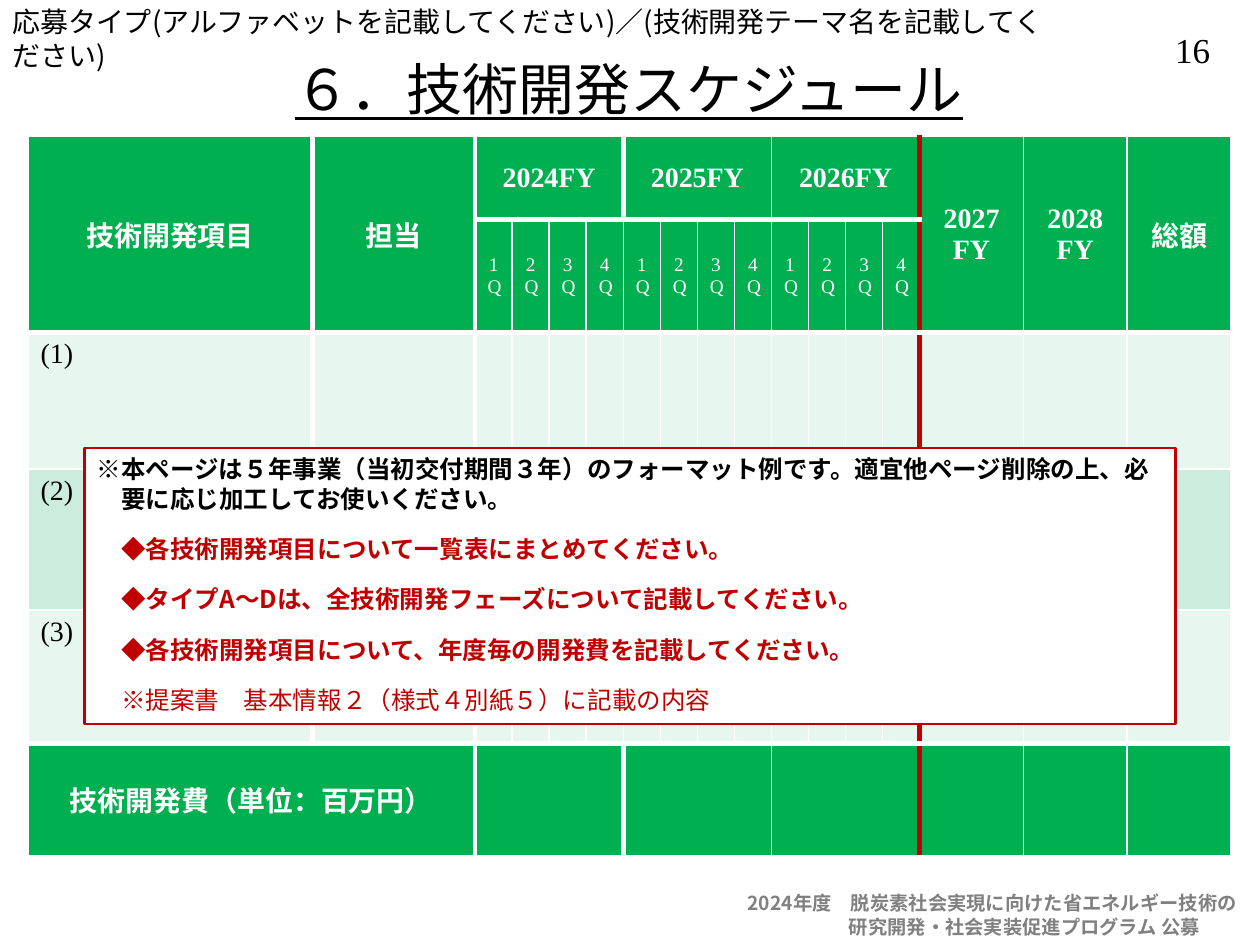
from lxml.etree import SubElement
from pptx import Presentation
from pptx.dml.color import RGBColor
from pptx.enum.shapes import MSO_SHAPE as Shape
from pptx.enum.text import MSO_ANCHOR as Anchor, MSO_AUTO_SIZE as AutoSize, PP_ALIGN as Align
from pptx.oxml.ns import qn
from pptx.util import Pt

SANS, SERIF = "Noto Sans CJK JP", "Times New Roman"
WHITE, BLACK, GRAY = "FFFFFF", "000000", "808080"
GREEN, RED, PALE, MINT = "00B050", "C00000", "E7F6EF", "CCECDE"


def color(value):
    """Turn a hex string into a colour."""
    return RGBColor.from_string(value)


def write(frame, text, first=True, size=16, font=SANS, fill=BLACK, bold=False,
          underline=False, align=Align.LEFT, before=0, margin=0, indent=0):
    """Write one paragraph into a text frame."""
    paragraph = frame.paragraphs[0] if first else frame.add_paragraph()
    paragraph.alignment = align
    if before:
        paragraph.space_before = Pt(before)
    if margin:
        properties = paragraph._p.get_or_add_pPr()
        properties.set("marL", str(Pt(margin)))
        properties.set("indent", str(Pt(indent)))
    run = paragraph.add_run()
    run.text = text
    run.font.size, run.font.name = Pt(size), font
    run.font.bold, run.font.underline = bold, underline
    run.font.color.rgb = color(fill)
    SubElement(run._r.get_or_add_rPr(), qn("a:ea")).set("typeface", SANS)


def add_text_box(slide, left, top, width, height, wrap=True, grow=True):
    """Add an empty text box and return its text frame."""
    frame = slide.shapes.add_textbox(Pt(left), Pt(top), Pt(width), Pt(height)).text_frame
    frame.word_wrap = wrap
    frame.auto_size = AutoSize.SHAPE_TO_FIT_TEXT if grow else AutoSize.NONE
    return frame


def add_heading(slide, left, top):
    """Add the application line, page number and title."""
    write(add_text_box(slide, left, top, 605, 27),
          "応募タイプ(アルファベットを記載してください)／(技術開発テーマ名を記載してください)")
    write(add_text_box(slide, left + 658, top + 13.5, 47, 31, wrap=False), "16",
          size=20, font=SERIF, align=Align.CENTER)
    title = add_text_box(slide, left + 53.5, top + 26, 612, 50, grow=False)
    title.vertical_anchor = Anchor.MIDDLE
    write(title, "６．技術開発スケジュール", size=32, underline=True, align=Align.CENTER)


def add_footer(slide, left, top):
    """Add the two-line programme name."""
    frame = add_text_box(slide, left, top, 300, 34)
    style = dict(size=11, fill=GRAY, bold=True)
    write(frame, "2024年度　脱炭素社会実現に向けた省エネルギー技術の", **style)
    write(frame, "研究開発・社会実装促進プログラム 公募", first=False, margin=58, **style)


def set_borders(cell, row, column):
    """Draw cell borders according to the grid lines that bound the cell."""
    def vertical(line):
        thick = line in (1, 2, 14) or (line == 6 and row in (0, 5))
        return (RED if line == 14 else WHITE), 3 if thick else 1

    def horizontal(line):
        return WHITE, 3 if line in (1, 2, 5) else 1

    edges = {"L": vertical(column), "R": vertical(column + cell.span_width),
             "T": horizontal(row), "B": horizontal(row + cell.span_height)}
    properties = cell._tc.get_or_add_tcPr()
    for side, (fill, width) in edges.items():
        line = SubElement(properties, qn(f"a:ln{side}"), w=str(Pt(width)))
        SubElement(SubElement(line, qn("a:solidFill")), qn("a:srgbClr"), val=fill)


def add_schedule(slide, left, top):
    """Add the schedule table with quarters, years and totals."""
    widths = [162.5, 93] + [21.2] * 12 + [59.3] * 3
    heights = [47.5, 64.8, 78, 80.5, 76.3, 64]
    fills = [GREEN, GREEN, PALE, MINT, PALE, GREEN]
    table = slide.shapes.add_table(len(heights), len(widths), Pt(left), Pt(top),
                                   Pt(sum(widths)), Pt(sum(heights))).table
    table.first_row = table.horz_banding = False
    for column, width in zip(table.columns, widths):
        column.width = Pt(width)
    for row, height in zip(table.rows, heights):
        row.height = Pt(height)

    for column in (0, 1, 14, 15, 16):
        table.cell(0, column).merge(table.cell(1, column))
    for row in (0, 5):
        for column in (2, 6, 10):
            table.cell(row, column).merge(table.cell(row, column + 3))
    table.cell(5, 0).merge(table.cell(5, 1))

    for row, fill in enumerate(fills):
        for column in range(len(widths)):
            cell = table.cell(row, column)
            set_borders(cell, row, column)
            cell.fill.solid()
            cell.fill.fore_color.rgb = color(fill)

    labels = {(0, 0): "技術開発項目", (0, 1): "担当", (0, 2): "2024FY", (0, 6): "2025FY",
              (0, 10): "2026FY", (0, 14): "2027\nFY", (0, 15): "2028\nFY", (0, 16): "総額",
              (5, 0): "技術開発費（単位：百万円）"}
    labels.update({(1, 2 + i): f"{i % 4 + 1}Q" for i in range(12)})
    for (row, column), text in labels.items():
        cell = table.cell(row, column)
        cell.vertical_anchor = Anchor.MIDDLE
        for i, line in enumerate(text.split("\n")):
            write(cell.text_frame, line, first=i == 0, size=11 if row == 1 else 16,
                  font=SERIF, fill=WHITE, bold=row != 1, align=Align.CENTER)
    for number in (1, 2, 3):
        write(table.cell(number + 1, 0).text_frame, f"({number})", font=SERIF)


def add_instructions(slide, left, top, width, height):
    """Add the red-framed box of instructions."""
    shape = slide.shapes.add_shape(Shape.RECTANGLE, Pt(left), Pt(top), Pt(width), Pt(height))
    shape.shadow.inherit = False
    shape.fill.solid()
    shape.fill.fore_color.rgb = color(WHITE)
    shape.line.color.rgb = color(RED)
    shape.line.width = Pt(1.5)
    frame = shape.text_frame
    frame.word_wrap = True
    frame.auto_size = AutoSize.SHAPE_TO_FIT_TEXT
    frame.vertical_anchor = Anchor.TOP
    write(frame, "※本ページは５年事業（当初交付期間３年）のフォーマット例です。"
          "適宜他ページ削除の上、必要に応じ加工してお使いください。",
          size=14, bold=True, margin=14, indent=-14)
    for text in ("◆各技術開発項目について一覧表にまとめてください。",
                 "◆タイプA～Dは、全技術開発フェーズについて記載してください。",
                 "◆各技術開発項目について、年度毎の開発費を記載してください。",
                 "※提案書　基本情報２（様式４別紙５）に記載の内容"):
        write(frame, text, first=False, size=14, fill=RED, bold=text.startswith("◆"),
              before=12, margin=14)


def main():
    """Build the schedule slide and save it."""
    presentation = Presentation()
    presentation.slide_width, presentation.slide_height = Pt(720), Pt(540)
    slide = presentation.slides.add_slide(presentation.slide_layouts[6])
    add_heading(slide, 0, -0.7)
    add_footer(slide, 420, 506)
    add_schedule(slide, 16, 77.8)
    add_instructions(slide, 48.2, 256, 623.5, 157.7)
    presentation.save("out.pptx")


if __name__ == "__main__":
    main()
